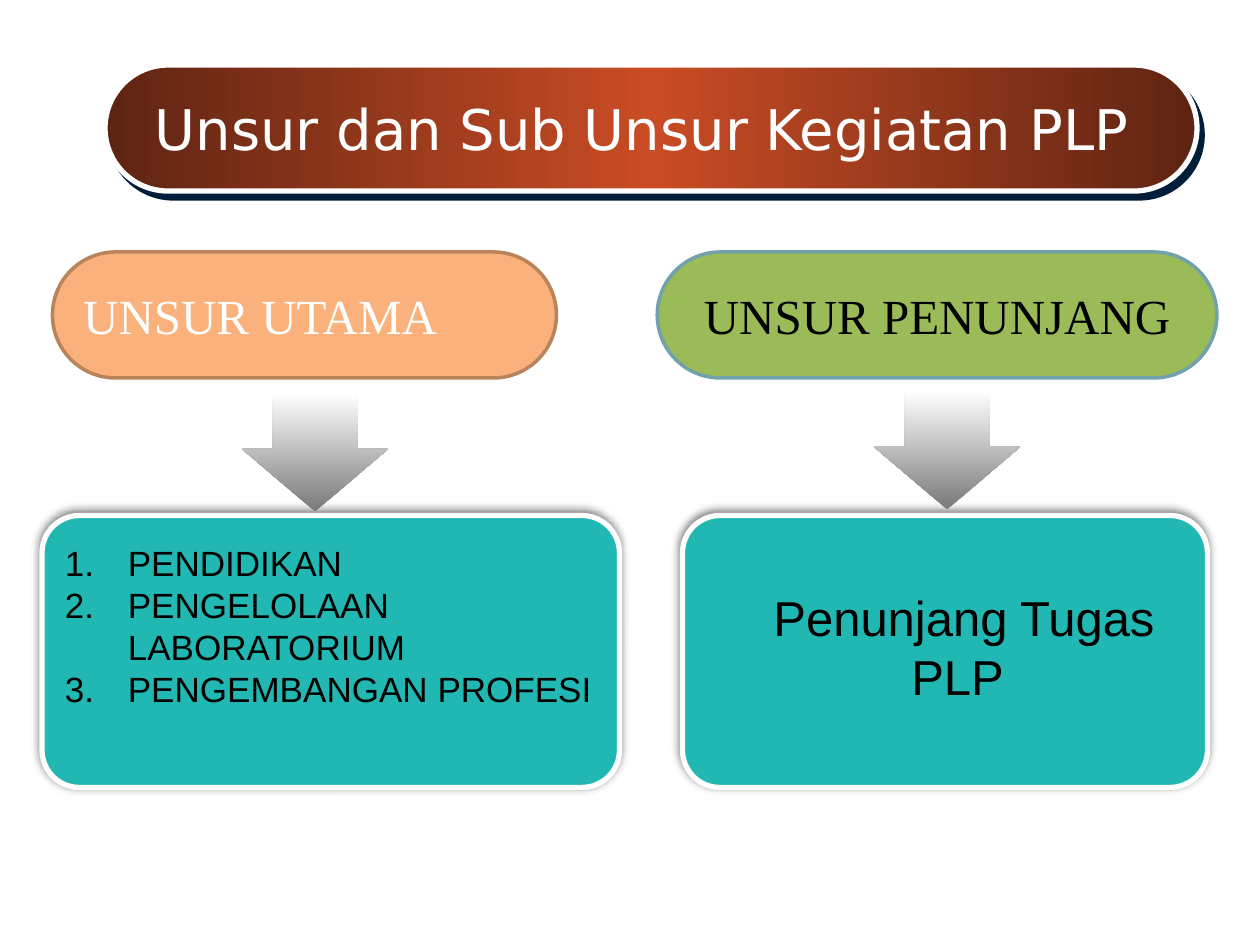
import pptx
import pptx.util
import pptx.dml.color
import pptx.enum.shapes
import pptx.enum.text
import pptx.oxml
import pptx.oxml.ns
import lxml.etree

COLS, ROWS = 120, 90
SHAPE = pptx.enum.shapes.MSO_SHAPE
ALIGN = pptx.enum.text.PP_ALIGN
ANCHOR = pptx.enum.text.MSO_ANCHOR

prs = pptx.Presentation()
prs.slide_width = pptx.util.Inches(10)
prs.slide_height = pptx.util.Inches(7.5)


def grid(x, y, w, h):
    cw, rh = prs.slide_width / COLS, prs.slide_height / ROWS
    return [round(v) for v in (x * cw, y * rh, w * cw, h * rh)]


def rgb(value):
    return pptx.dml.color.RGBColor.from_string(value)


def add_xml(parent, tag, **attrs):
    el = lxml.etree.SubElement(parent, pptx.oxml.ns.qn(tag))
    for key, value in attrs.items():
        el.set(key, str(value))
    return el


def add_gradient(sp, stops, angle):
    sp.fill.gradient()
    grad = sp._element.spPr.find(pptx.oxml.ns.qn("a:gradFill"))
    for child in list(grad):
        grad.remove(child)
    gs_lst = add_xml(grad, "a:gsLst")
    for pos, color in stops:
        gs = add_xml(gs_lst, "a:gs", pos=pos * 1000)
        add_xml(gs, "a:srgbClr", val=color)
    add_xml(grad, "a:lin", ang=angle * 60000, scaled=0)


def add_shadow(sp, color, alpha, blur, dist, angle):
    effects = sp._element.spPr.find(pptx.oxml.ns.qn("a:effectLst"))
    shadow = add_xml(effects, "a:outerShdw", blurRad=pptx.util.Pt(blur),
                     dist=pptx.util.Pt(dist), dir=angle * 60000, algn="ctr", rotWithShape=0)
    clr = add_xml(shadow, "a:srgbClr", val=color)
    add_xml(clr, "a:alpha", val=alpha * 1000)


def add_box(s, kind, box, adj, fill=None, line=None, width=0):
    sp = s.shapes.add_shape(kind, *grid(*box))
    sp.shadow.inherit = False
    for i, value in enumerate(adj):
        sp.adjustments[i] = value
    if fill:
        sp.fill.solid()
        sp.fill.fore_color.rgb = rgb(fill)
    if line:
        sp.line.color.rgb = rgb(line)
        sp.line.width = pptx.util.Pt(width)
    else:
        sp.line.fill.background()
    return sp


def write(sp, lines, size, font, color="000000", align=ALIGN.LEFT,
          anchor=ANCHOR.TOP, wrap=False, hanging=False, numbered=False):
    tf = sp.text_frame
    tf.word_wrap = wrap
    tf.vertical_anchor = anchor
    for i, text in enumerate(lines):
        p = tf.add_paragraph() if i else tf.paragraphs[0]
        p.alignment = align
        if hanging:
            indent = pptx.util.Inches(0.5)
            p_pr = p._p.get_or_add_pPr()
            p_pr.set("marL", str(indent))
            p_pr.set("indent", str(-indent))
            if numbered:
                add_xml(p_pr, "a:buFont", typeface="+mj-lt")
                add_xml(p_pr, "a:buAutoNum", type="arabicPeriod")
        r = p.add_run()
        r.text = text
        r.font.size = pptx.util.Pt(size)
        r.font.name = font
        r.font.color.rgb = rgb(color)


def title_banner(s, box):
    banner = add_box(s, SHAPE.ROUNDED_RECTANGLE, box, [0.5], line="FFFFFF", width=3)
    add_gradient(banner, [(0, "5E2412"), (50, "C94C25"), (100, "5E2412")], 0)
    add_shadow(banner, "001D3A", 100, 0, 5, 53)
    title = s.shapes.title
    title.left, title.top, title.width, title.height = grid(*box)
    write(title, ["Unsur dan Sub Unsur Kegiatan PLP "], 32, "DejaVu Sans", "FFFFFF",
          ALIGN.CENTER, ANCHOR.MIDDLE)
    s.shapes._spTree.append(title._element)


def element_column(s, box, head, head_style, arrow, note, lines, note_style):
    x, y, w, h = box
    card_y, card_h = y + 25.1, h - 25.1
    card = add_box(s, SHAPE.ROUNDED_RECTANGLE, (x, card_y, w, card_h), [0.137],
                   "21B8B3", "FFFFFF", 3)
    add_shadow(card, "000000", 50, 5, 2, 245)

    dx, head_w, label, fill, line = head
    pill = add_box(s, SHAPE.ROUNDED_RECTANGLE, (x + dx, y, head_w, 12), [0.5], fill, line, 2)
    write(pill, [label], 28, "Times New Roman", anchor=ANCHOR.MIDDLE, **head_style)

    dx, dy = arrow
    pointer = add_box(s, SHAPE.UP_ARROW, (x + dx, y + dy, 14, 11), [0.578, 0.544])
    pointer.rotation = 180
    add_gradient(pointer, [(0, "797979"), (100, "FCFCFC")], 90)

    dx, dy, note_w, note_h = note
    tb = s.shapes.add_textbox(*grid(x + dx, card_y + dy, note_w, note_h))
    write(tb, lines, font="Arial", wrap=True, hanging=True, **note_style)


def main():
    s = prs.slides.add_slide(prs.slide_layouts[5])
    title_banner(s, (10, 6.2, 104, 12))
    element_column(
        s, (4, 24, 55, 51),
        (1, 48, "UNSUR UTAMA", "FAB17B", "B9835B"), {"color": "FFFFFF"},
        (19, 13.7), (1, 1.9, 54, 17.4),
        ["PENDIDIKAN", "PENGELOLAAN LABORATORIUM", "PENGEMBANGAN PROFESI"],
        {"size": 20, "numbered": True})
    element_column(
        s, (65, 24, 50, 51),
        (-2.4, 53.3, "UNSUR PENUNJANG", "9BBB59", "71A1AB"), {"align": ALIGN.CENTER},
        (18.2, 13.5), (6.3, 6.3, 41, 12.5),
        ["Penunjang Tugas", "PLP "],
        {"size": 28, "align": ALIGN.CENTER})
    prs.save("out.pptx")


if __name__ == "__main__":
    main()
